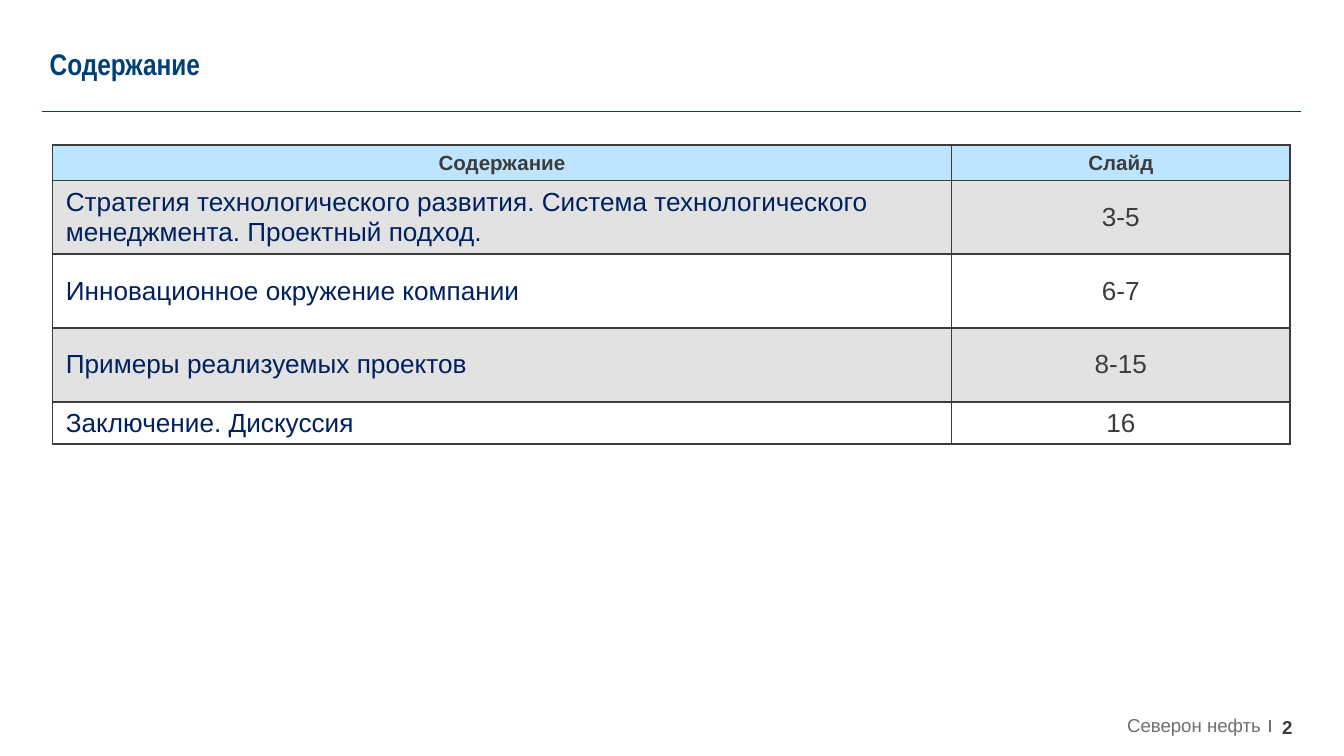
from lxml import etree
from pptx import Presentation
from pptx.dml.color import RGBColor
from pptx.enum import shapes, text
from pptx.oxml import ns
from pptx.util import Inches, Pt

SLIDE_WIDTH = 10
SLIDE_HEIGHT = SLIDE_WIDTH * 9 / 16
COLORS = {
    "navy": "004077",
    "ink": "002060",
    "dark": "3C3C3C",
    "grey": "706F6F",
    "header": "BEE5FF",
    "band": "E2E2E2",
    "white": "FFFFFF",
}
COLUMN_WIDTHS = [6.69, 2.52]
HEADINGS = ["Содержание", "Слайд"]
# Topic, slide numbers, row height
CONTENTS = [
    ("Стратегия технологического развития. Система технологического "
     "менеджмента. Проектный подход.", "3-5", 0.54),
    ("Инновационное окружение компании", "6-7", 0.55),
    ("Примеры реализуемых проектов", "8-15", 0.55),
    ("Заключение. Дискуссия", "16", 0.31),
]


def rgb(name):
    return RGBColor.from_string(COLORS[name])


def write_text(frame, content, size=14, color="dark", bold=False,
               font="Arial", align=text.PP_ALIGN.LEFT):
    paragraph = frame.paragraphs[0]
    paragraph.alignment = align
    run = paragraph.add_run()
    run.text = content
    run.font.name = font
    run.font.size = Pt(size)
    run.font.bold = bold
    run.font.color.rgb = rgb(color)


def add_borders(cell, color="dark", width=1):
    properties = cell._tc.get_or_add_tcPr()
    for side in ("lnL", "lnR", "lnT", "lnB"):
        line = etree.SubElement(properties, ns.qn(f"a:{side}"), w=str(Pt(width)))
        fill = etree.SubElement(line, ns.qn("a:solidFill"))
        etree.SubElement(fill, ns.qn("a:srgbClr"), val=COLORS[color])


class SlideBuilder:
    def __init__(self, slide, font="Arial"):
        self.slide = slide
        self.font = font

    def line(self, start, end, color, width):
        connector = self.slide.shapes.add_connector(
            shapes.MSO_CONNECTOR.STRAIGHT,
            *(Inches(value) for value in (*start, *end)))
        connector.line.color.rgb = rgb(color)
        connector.line.width = Pt(width)
        etree.SubElement(connector._element.spPr, ns.qn("a:effectLst"))

    def text_box(self, box, content, inset=0, wrap=True,
                 anchor=text.MSO_ANCHOR.TOP, **style):
        shape = self.slide.shapes.add_textbox(*(Inches(value) for value in box))
        frame = shape.text_frame
        frame.word_wrap = wrap
        frame.vertical_anchor = anchor
        frame.margin_left = frame.margin_right = 0
        frame.margin_top = frame.margin_bottom = Inches(inset)
        write_text(frame, content, **{"font": self.font, **style})

    def cell(self, cell, content, fill, **style):
        cell.margin_left = cell.margin_right = Inches(0.1)
        cell.margin_top = cell.margin_bottom = Inches(0.04)
        cell.vertical_anchor = text.MSO_ANCHOR.MIDDLE
        add_borders(cell)
        cell.fill.solid()
        cell.fill.fore_color.rgb = rgb(fill)
        write_text(cell.text_frame, content, font=self.font, **style)

    def contents_table(self, left, top, header_height=0.26):
        heights = [header_height] + [height for _, _, height in CONTENTS]
        table = self.slide.shapes.add_table(
            len(heights), len(COLUMN_WIDTHS), Inches(left), Inches(top),
            Inches(sum(COLUMN_WIDTHS)), Inches(sum(heights))).table
        for column, width in zip(table.columns, COLUMN_WIDTHS):
            column.width = Inches(width)
        for row, height in zip(table.rows, heights):
            row.height = Inches(height)

        center = text.PP_ALIGN.CENTER
        for column, heading in enumerate(HEADINGS):
            self.cell(table.cell(0, column), heading, "header",
                      size=11, bold=True, align=center)
        for row, (topic, numbers, _) in enumerate(CONTENTS, start=1):
            fill = "band" if row % 2 else "white"
            self.cell(table.cell(row, 0), topic, fill, color="ink")
            self.cell(table.cell(row, 1), numbers, fill, align=center)


def main():
    presentation = Presentation()
    presentation.slide_width = Inches(SLIDE_WIDTH)
    presentation.slide_height = Inches(SLIDE_HEIGHT)
    builder = SlideBuilder(
        presentation.slides.add_slide(presentation.slide_layouts[6]))

    builder.line((0.31, 0.83), (9.68, 0.83), "navy", 1)
    builder.line((9.45, 5.36), (9.45, 5.45), "grey", 0.75)
    builder.text_box((9.54, 5.33, 0.24, 0.13), "2", size=10, bold=True)
    builder.text_box((5.94, 5.33, 3.44, 0.13), "Северон нефть", size=10,
                     color="grey", align=text.PP_ALIGN.RIGHT,
                     anchor=text.MSO_ANCHOR.MIDDLE)
    builder.text_box((0.37, 0.29, 1.13, 0.37), "Содержание", inset=0.05,
                     wrap=False, size=16, color="navy", bold=True,
                     font="Arial Narrow")
    builder.contents_table(0.39, 1.08)
    presentation.save("out.pptx")


if __name__ == "__main__":
    main()
